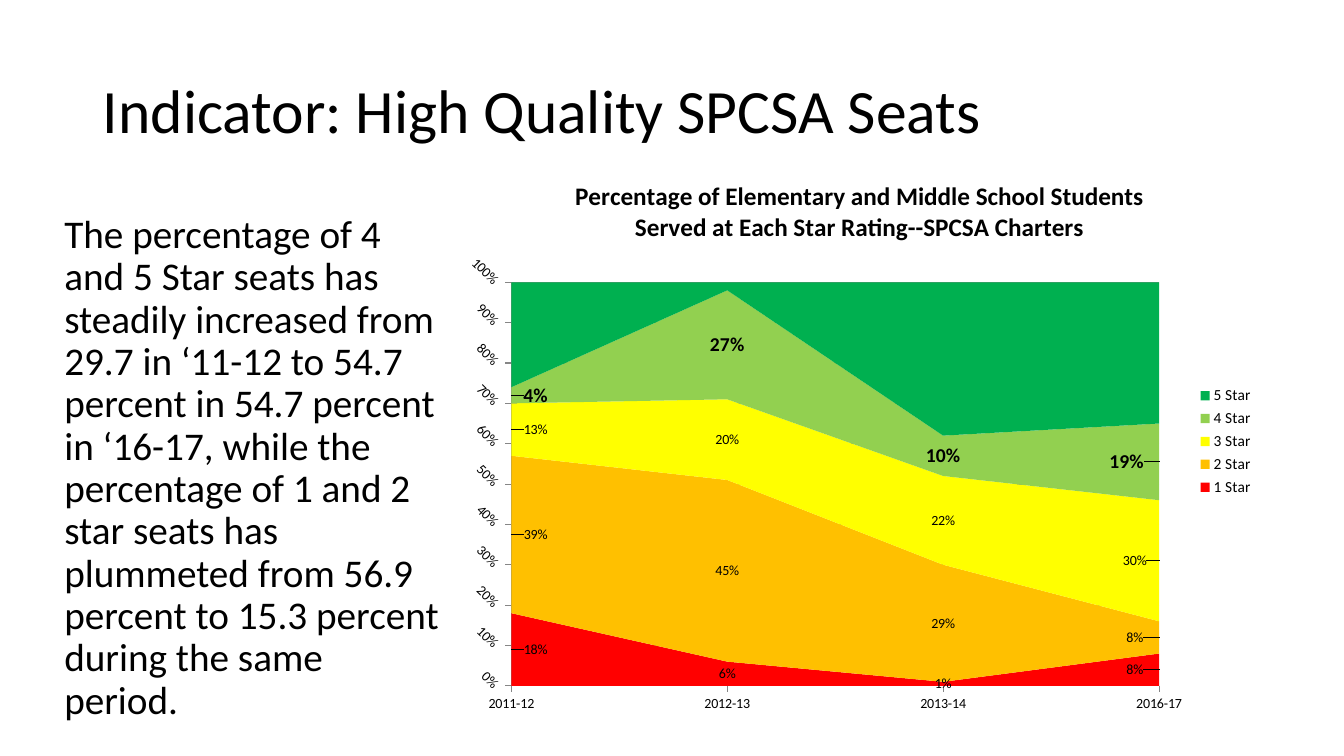
from dataclasses import dataclass

from lxml.etree import SubElement
from pptx import Presentation
from pptx.chart.data import CategoryChartData
from pptx.dml.color import RGBColor
from pptx.enum.chart import XL_CHART_TYPE, XL_LEGEND_POSITION, XL_TICK_MARK
from pptx.enum.text import MSO_ANCHOR, MSO_AUTO_SIZE, PP_ALIGN
from pptx.oxml.ns import qn
from pptx.util import Inches, Pt


@dataclass(frozen=True)
class Theme:
    font: str = "Calibri"
    text: RGBColor = RGBColor(0, 0, 0)
    line: RGBColor = RGBColor(0x86, 0x86, 0x86)
    title: int = 44
    body: int = 28
    chart_title: int = 18
    chart: int = 10
    legend: int = 11


@dataclass(frozen=True)
class Rating:
    name: str
    shares: tuple
    color: str
    label_size: int = 10
    label_bold: bool = False
    first_shift: float = 0.03
    last_shift: float = -0.03
    hidden: tuple = ()


THEME = Theme()
TITLE = "Indicator: High Quality SPCSA Seats"
BODY = (
    "The percentage of 4 and 5 Star seats has steadily increased from 29.7 in "
    "‘11-12 to 54.7 percent in 54.7 percent in ‘16-17, while the percentage of "
    "1 and 2 star seats has plummeted from 56.9 percent to 15.3 percent during "
    "the same period."
)
CHART_TITLE = (
    "Percentage of Elementary and Middle School Students "
    "Served at Each Star Rating--SPCSA Charters"
)
YEARS = ("2011-12", "2012-13", "2013-14", "2016-17")
RATINGS = (
    Rating("1 Star", (0.18, 0.06, 0.01, 0.08), "FF0000"),
    Rating("2 Star", (0.39, 0.45, 0.29, 0.08), "FFC000"),
    Rating("3 Star", (0.13, 0.2, 0.22, 0.3), "FFFF00"),
    Rating("4 Star", (0.04, 0.27, 0.1, 0.19), "92D050", 14, True, last_shift=-0.04),
    Rating("5 Star", (0.26, 0.03, 0.39, 0.36), "00B050", 20, True,
           last_shift=-0.05, hidden=(0, 1)),
)


def set_font(font, size, bold=False):
    font.name = THEME.font
    font.size = Pt(size)
    font.bold = bold
    font.color.rgb = THEME.text


def place(shape, left, top, width, height):
    shape.left, shape.top = Inches(left), Inches(top)
    shape.width, shape.height = Inches(width), Inches(height)


def write_text(shape, text, size, anchor, space_before=0):
    frame = shape.text_frame
    frame.word_wrap = True
    frame.auto_size = MSO_AUTO_SIZE.NONE
    frame.vertical_anchor = anchor
    frame.text = text
    para = frame.paragraphs[0]
    para.alignment = PP_ALIGN.LEFT
    para.line_spacing = 0.9
    para.space_before = Pt(space_before)
    set_font(para.font, size)


def add_layout(parent, index, **settings):
    for old in parent.findall(qn("c:layout")):
        parent.remove(old)
    layout = SubElement(parent, qn("c:layout"))
    manual = SubElement(layout, qn("c:manualLayout"))
    for name, value in settings.items():
        SubElement(manual, qn(f"c:{name}")).set("val", str(value))
    parent.insert(index, layout)


def shift_label(series, rating, index, shift):
    set_font(series.points[index].data_label.font, rating.label_size, rating.label_bold)
    label = series._element.xpath(f"c:dLbls/c:dLbl[c:idx/@val='{index}']")[0]
    add_layout(label, 1, x=shift, y=0)
    number_format = SubElement(label, qn("c:numFmt"))
    number_format.set("formatCode", "0%")
    number_format.set("sourceLinked", "0")
    label.insert(2, number_format)


def hide_label(series, index):
    series.points[index].data_label.font
    label = series._element.xpath(f"c:dLbls/c:dLbl[c:idx/@val='{index}']")[0]
    for child in list(label)[1:]:
        label.remove(child)
    SubElement(label, qn("c:delete")).set("val", "1")


def format_series(series, rating):
    series.format.fill.solid()
    series.format.fill.fore_color.rgb = RGBColor.from_string(rating.color)
    series.format.line.fill.background()
    labels = series.data_labels
    labels.show_value = True
    labels.number_format = "0%"
    labels.number_format_is_linked = False
    set_font(labels.font, rating.label_size, rating.label_bold)
    shifts = {0: rating.first_shift, len(YEARS) - 1: rating.last_shift}
    for index, shift in shifts.items():
        if index not in rating.hidden:
            shift_label(series, rating, index, shift)
    for index in rating.hidden:
        hide_label(series, index)


def format_axis(axis):
    axis.major_tick_mark = XL_TICK_MARK.OUTSIDE
    axis.minor_tick_mark = XL_TICK_MARK.NONE
    axis.format.line.color.rgb = THEME.line
    set_font(axis.tick_labels.font, THEME.chart)


def format_value_axis(axis):
    format_axis(axis)
    axis.minimum_scale, axis.maximum_scale, axis.major_unit = 0, 1, 0.1
    axis.has_major_gridlines = True
    axis.major_gridlines.format.line.color.rgb = THEME.line
    axis.tick_labels.number_format = "0%"
    axis.tick_labels.number_format_is_linked = False
    axis._element.xpath("c:txPr/a:bodyPr")[0].set("rot", str(45 * 60000))
    for crossing in axis._element.findall(qn("c:crossBetween")):
        crossing.set("val", "midCat")


def add_rating_chart(slide):
    data = CategoryChartData(number_format="0%")
    data.categories = YEARS
    for rating in RATINGS:
        data.add_series(rating.name, rating.shares)
    chart = slide.shapes.add_chart(
        XL_CHART_TYPE.AREA_STACKED,
        Inches(4.51), Inches(1.56), Inches(8.03), Inches(5.64), data,
    ).chart
    set_font(chart.font, THEME.chart)
    chart.has_title = True
    chart.chart_title.include_in_layout = False
    chart.chart_title.text_frame.text = CHART_TITLE
    set_font(chart.chart_title.text_frame.paragraphs[0].font, THEME.chart_title, True)
    chart.has_legend = True
    chart.legend.position = XL_LEGEND_POSITION.RIGHT
    chart.legend.include_in_layout = False
    set_font(chart.legend.font, THEME.legend)
    chart.plots[0].vary_by_categories = False
    for series, rating in zip(chart.plots[0].series, RATINGS):
        format_series(series, rating)
    format_axis(chart.category_axis)
    format_value_axis(chart.value_axis)
    plot_area = chart._chartSpace.xpath("c:chart/c:plotArea")[0]
    add_layout(plot_area, 0, layoutTarget="inner", xMode="edge", yMode="edge",
               x=0.07, y=0.22, w=0.8, h=0.71)


def main():
    deck = Presentation()
    deck.slide_width, deck.slide_height = Inches(13.33), Inches(7.5)
    slide = deck.slides.add_slide(deck.slide_layouts.get_by_name("Title Only"))
    title = slide.shapes.title
    place(title, 0.92, 0.4, 11.5, 1.45)
    write_text(title, TITLE, THEME.title, MSO_ANCHOR.MIDDLE)
    body = slide.shapes.add_textbox(Inches(0.54), Inches(2.08), Inches(3.97), Inches(5.27))
    write_text(body, BODY, THEME.body, MSO_ANCHOR.TOP, space_before=10)
    add_rating_chart(slide)
    deck.save("out.pptx")


if __name__ == "__main__":
    main()
